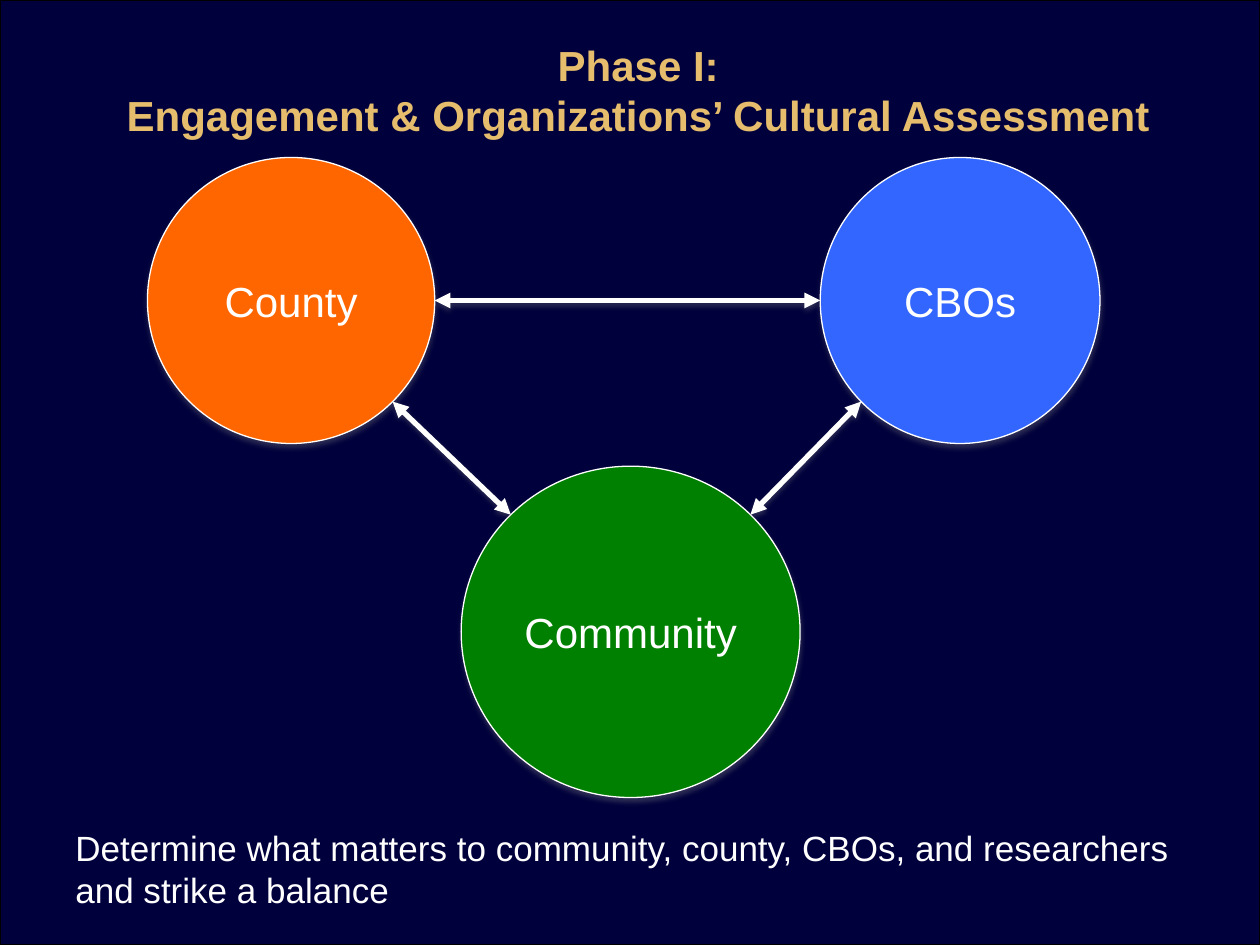
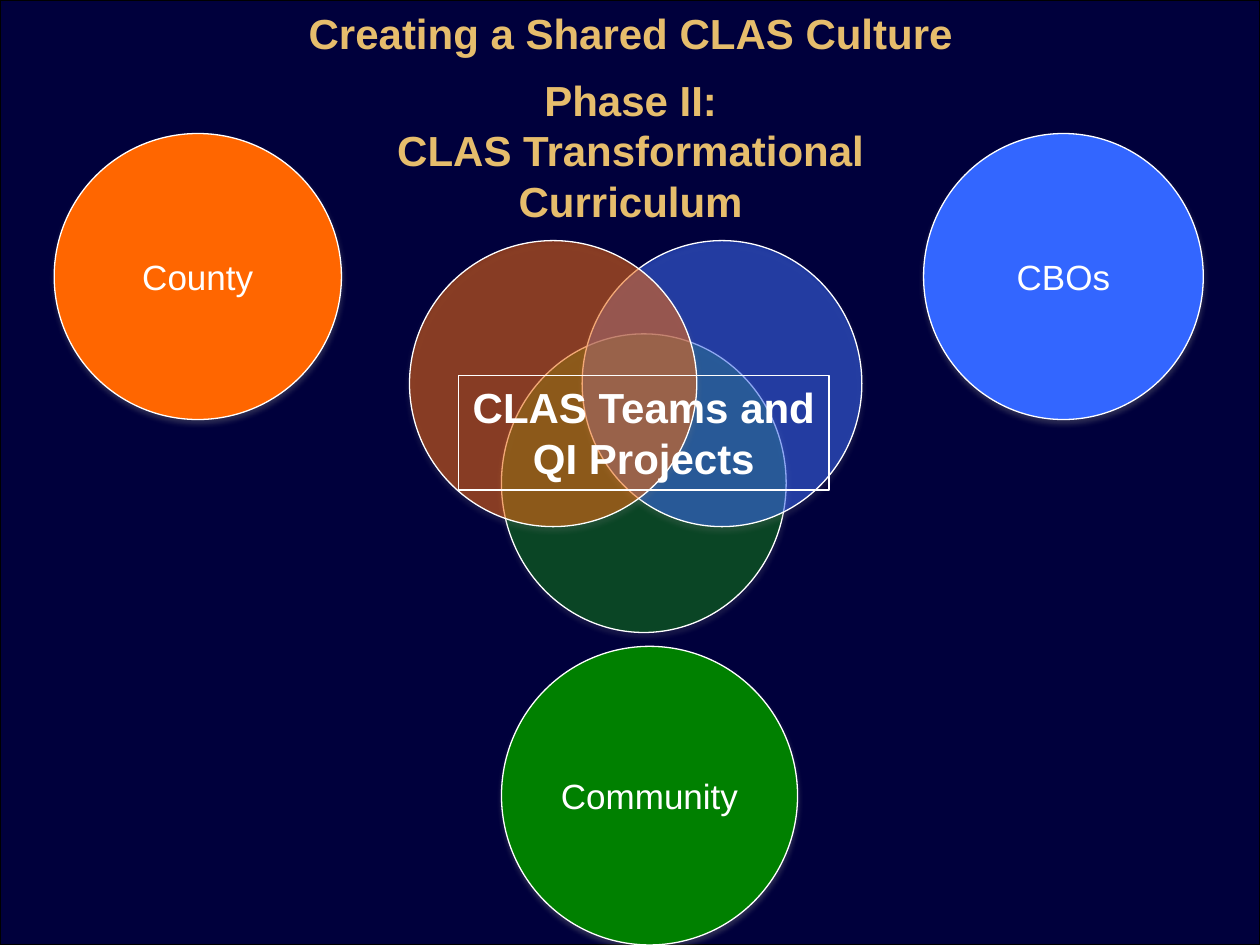
"""Builds two slides on the phases of a shared CLAS culture."""
from math import sqrt

from lxml.etree import SubElement
from pptx import Presentation
from pptx.dml.color import RGBColor
from pptx.enum.shapes import MSO_CONNECTOR, MSO_SHAPE
from pptx.enum.text import MSO_ANCHOR, MSO_AUTO_SIZE, PP_ALIGN
from pptx.oxml.ns import qn
from pptx.util import Inches, Pt

WIDE, HIGH = 10, 7.5
FONT = "Arial"
HUES = {"back": "00003C", "edge": "000000", "title": "E6BD6C", "white": "FFFFFF",
        "County": "FF6600", "CBOs": "3366FF", "Community": "008000"}
SIZES = {"County": (2.28, 2.27), "CBOs": (2.22, 2.27)}
DIAG = sqrt(0.5)

ONE = {
    "title": ["Phase I:", "Engagement & Organizations’ Cultural Assessment"],
    "place": (0.82, 0.26, 8.49, 0.91),
    "ovals": [("County", 1.17, 1.25), ("CBOs", 6.51, 1.25),
              ("Community", 3.66, 3.7, 2.69, 2.63)],
    "links": [("County", (1, 0), "CBOs", (-1, 0)),
              ("Community", (DIAG, -DIAG), "CBOs", (-DIAG, DIAG)),
              ("Community", (-DIAG, -DIAG), "County", (DIAG, DIAG))],
    "note": "Determine what matters to community, county, CBOs, and researchers"
            " and strike a balance",
}
TWO = {
    "title": ["Creating a Shared CLAS Culture", "Phase II:",
              "CLAS Transformational", "Curriculum"],
    "place": (1.92, 0.01, 6.17, 1.85),
    "ovals": [("County", 0.43, 1.06), ("CBOs", 7.33, 1.06),
              ("Community", 3.98, 5.13, 2.35, 2.37)],
    "venn": [("Community", 46, 3.98, 2.65, 2.26, 2.37),
             ("CBOs", 49, 4.62, 1.91), ("County", 49, 3.25, 1.91)],
    "label": ["CLAS Teams and", "QI Projects"],
}


def color(name):
    return RGBColor.from_string(HUES[name])


def write(shape, lines, size=24, hue="white", bold=False, align=PP_ALIGN.CENTER,
          anchor=MSO_ANCHOR.TOP, wrap=True):
    frame = shape.text_frame
    frame.auto_size = MSO_AUTO_SIZE.NONE
    frame.word_wrap, frame.vertical_anchor = wrap, anchor
    frame.text = "\n".join(lines)
    for para in frame.paragraphs:
        para.alignment = align
        font = para.runs[0].font
        font.name, font.size, font.bold = FONT, Pt(size), bold
        font.color.rgb = color(hue)


def shade(shape, alpha, dist):
    shape_props = shape.element.spPr
    for old in shape_props.findall(qn("a:effectLst")):
        shape_props.remove(old)
    effects = SubElement(shape_props, qn("a:effectLst"))
    outer = SubElement(effects, qn("a:outerShdw"), blurRad=str(Pt(3.1)),
                       dist=str(Pt(dist)), dir="5400000", rotWithShape="0")
    tint = SubElement(outer, qn("a:srgbClr"), val="808080")
    SubElement(tint, qn("a:alpha"), val=str(alpha * 1000))


def draw(slide, kind, box, fill=None, line="white", width=0.75):
    shape = slide.shapes.add_shape(kind, *map(Inches, box))
    shape.shadow.inherit = False
    if fill:
        shape.fill.solid()
        shape.fill.fore_color.rgb = color(fill)
    else:
        shape.fill.background()
    shape.line.color.rgb = color(line)
    shape.line.width = Pt(width)
    return shape


def oval(slide, name, left, top, *size, alpha=None):
    box = (left, top, *(size or SIZES[name]))
    shape = draw(slide, MSO_SHAPE.OVAL, box, name)
    shade(shape, 35, 1.8)
    if alpha:
        tint = shape.element.spPr.find(qn("a:solidFill"))[0]
        SubElement(tint, qn("a:alpha"), val=str(alpha * 1000))
    return shape


def rim(shape, side):
    return (round(shape.left + shape.width * (1 + side[0]) / 2),
            round(shape.top + shape.height * (1 + side[1]) / 2))


def link(slide, start, end):
    arrow = slide.shapes.add_connector(MSO_CONNECTOR.STRAIGHT, *start, *end)
    arrow.line.color.rgb = color("white")
    arrow.line.width = Pt(3)
    stroke = arrow.element.spPr.find(qn("a:ln"))
    for tip in ("a:headEnd", "a:tailEnd"):
        SubElement(stroke, qn(tip), type="triangle")
    shade(arrow, 38, 1.6)


def begin(deck, data, size):
    slide = deck.slides.add_slide(deck.slide_layouts[5])
    title = slide.shapes.title
    title.left, title.top, title.width, title.height = map(Inches, data["place"])
    write(title, data["title"], hue="title", bold=True)
    ovals = {}
    for name, *box in data["ovals"]:
        ovals[name] = oval(slide, name, *box)
        write(ovals[name], [name], size, anchor=MSO_ANCHOR.MIDDLE)
    return slide, ovals


def phase_one(deck):
    slide, ovals = begin(deck, ONE, 24)
    for first, out, last, into in ONE["links"]:
        link(slide, rim(ovals[first], out), rim(ovals[last], into))
    note = slide.shapes.add_textbox(*map(Inches, (0.5, 6.51, 9.17, 0.77)))
    write(note, [ONE["note"]], 20, align=PP_ALIGN.LEFT)
    return slide


def phase_two(deck):
    slide, _ = begin(deck, TWO, 20)
    slide.shapes.title.text_frame.paragraphs[1].space_before = Pt(9.4)
    for name, alpha, *box in TWO["venn"]:
        oval(slide, name, *box, alpha=alpha)
    label = draw(slide, MSO_SHAPE.RECTANGLE, (3.64, 2.98, 2.94, 0.91))
    write(label, TWO["label"], bold=True, wrap=False)


def main():
    deck = Presentation()
    deck.slide_width, deck.slide_height = Inches(WIDE), Inches(HIGH)
    slide = phase_one(deck)
    back = draw(slide, MSO_SHAPE.RECTANGLE, (0, 0, WIDE, HIGH), "back", "edge", 1)
    deck.slide_master.shapes.element.insert(2, back.element)
    phase_two(deck)
    deck.save("out.pptx")


if __name__ == "__main__":
    main()
